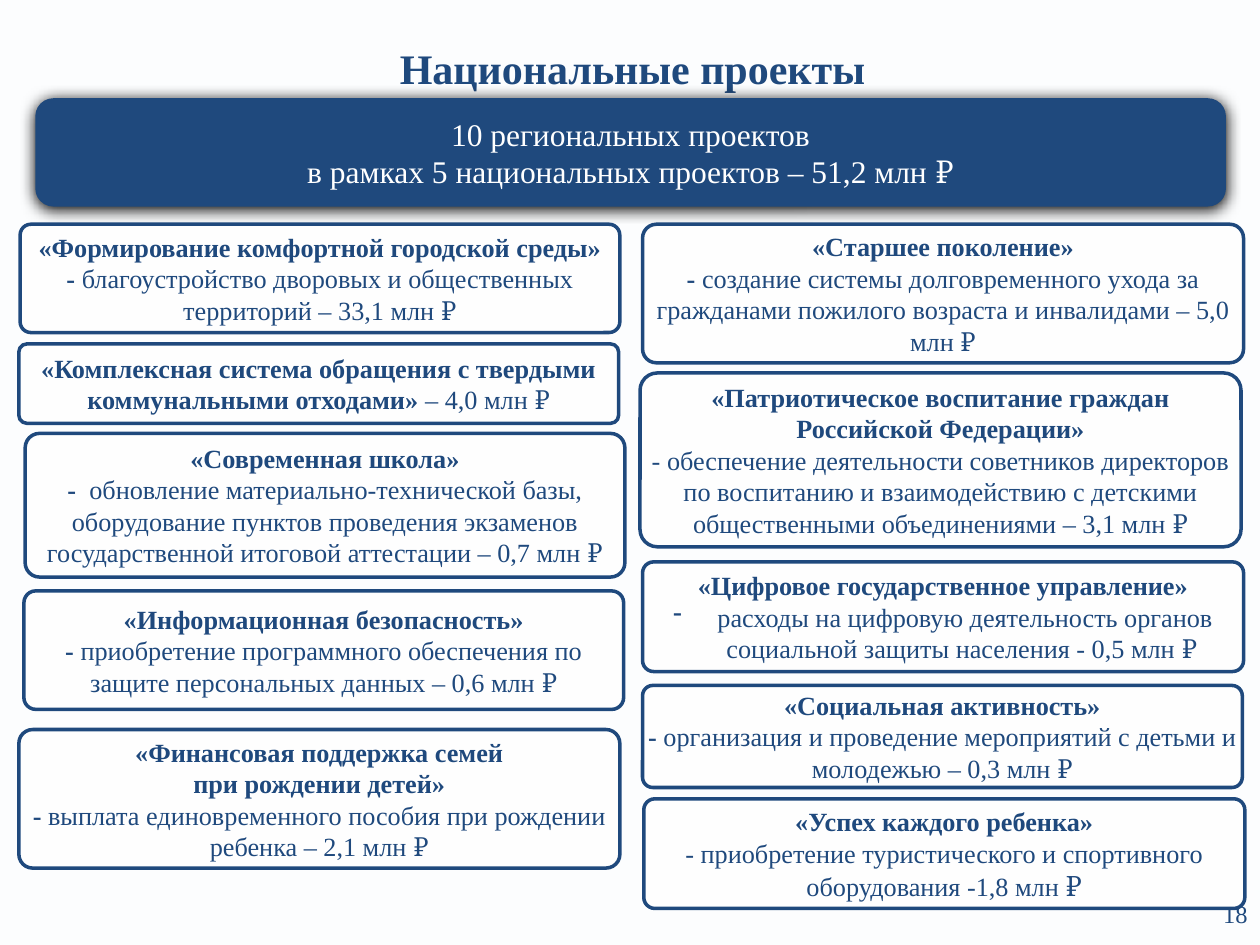
from lxml import etree
from pptx import Presentation
from pptx.dml.color import RGBColor
from pptx.enum.shapes import MSO_SHAPE
from pptx.enum.text import MSO_ANCHOR, PP_ALIGN
from pptx.oxml import parse_xml
from pptx.oxml.ns import nsdecls, qn
from pptx.util import Inches, Pt

ROUND = MSO_SHAPE.ROUNDED_RECTANGLE
TOP, MIDDLE = MSO_ANCHOR.TOP, MSO_ANCHOR.MIDDLE
CENTER, RIGHT = PP_ALIGN.CENTER, PP_ALIGN.RIGHT

NAVY = RGBColor(0x1F, 0x49, 0x7D)
WHITE = RGBColor(0xFF, 0xFF, 0xFF)
PALE = RGBColor(0xFC, 0xFD, 0xFE)

SHADOW = (
    f'<a:effectLst {nsdecls("a")}><a:outerShdw blurRad="107950" dist="12700" '
    'dir="5400000" algn="ctr" rotWithShape="0"><a:srgbClr val="000000"/>'
    "</a:outerShdw></a:effectLst>"
)

# Cards: left, top, width, height, then paragraphs as (bold part, plain part)
CARDS = [
    # Left column
    (0.16, 1.78, 4.76, 0.86, [
        ("«Формирование комфортной городской среды»", ""),
        ("- ", "благоустройство дворовых и общественных территорий – 33,1 млн ₽")]),
    (0.15, 2.73, 4.76, 0.63, [
        ("«Комплексная система обращения с твердыми коммунальными отходами» ",
         "– 4,0 млн ₽")]),
    (0.20, 3.44, 4.76, 1.14, [
        ("«Современная школа»", ""),
        ("-  ", "обновление материально-технической базы, оборудование пунктов "
         "проведения экзаменов государственной итоговой аттестации – 0,7 млн ₽")]),
    (0.19, 4.69, 4.76, 0.94, [
        ("«Информационная безопасность»", ""),
        ("- ", "приобретение программного обеспечения по защите "
         "персональных данных – 0,6 млн ₽")]),
    (0.15, 5.79, 4.77, 1.10, [
        ("«Финансовая поддержка семей", ""),
        ("при рождении детей»", ""),
        ("- ", "выплата единовременного пособия при рождении ребенка – 2,1 млн ₽")]),
    # Right column
    (5.10, 1.78, 4.77, 1.10, [
        ("«Старшее поколение»", ""),
        ("- ", "создание системы долговременного ухода за гражданами "
         "пожилого возраста и инвалидами – 5,0 млн ₽")]),
    (5.08, 2.96, 4.77, 1.38, [
        ("«Патриотическое воспитание граждан Российской Федерации»", ""),
        ("", "- обеспечение деятельности советников директоров по воспитанию и "
         "взаимодействию с детскими общественными объединениями – 3,1 млн ₽")]),
    (5.10, 4.46, 4.77, 0.87, [
        ("«Цифровое государственное управление»", ""),
        ("", " расходы на цифровую деятельность органов социальной "
         "защиты населения - 0,5 млн ₽")]),
    (5.10, 5.44, 4.76, 0.81, [
        ("«Социальная активность»", ""),
        ("- ", "организация и проведение мероприятий с детьми и "
         "молодежью – 0,3 млн ₽")]),
    (5.11, 6.34, 4.77, 0.87, [
        ("«Успех каждого ребенка»", ""),
        ("", "- приобретение туристического и спортивного оборудования -1,8 млн ")]),
]
DIGITAL, SUCCESS = 7, 9


class Deck:
    font = "Times New Roman"

    def __init__(self):
        self.prs = Presentation()
        self.prs.slide_width, self.prs.slide_height = Inches(10), Inches(7.5)
        self.slide = self.prs.slides.add_slide(self.prs.slide_layouts[6])
        back = self.slide.background.fill
        back.solid()
        back.fore_color.rgb = PALE

    def add_run(self, para, text, size, color, bold=False):
        run = para.add_run()
        run.text = text
        font = run.font
        font.name, font.size, font.bold = self.font, Pt(size), bold
        font.color.rgb = color

    def set_text(self, shape, paras, size, color, align=CENTER, anchor=MIDDLE):
        frame = shape.text_frame
        frame.word_wrap = True
        frame.vertical_anchor = anchor
        for i, parts in enumerate(paras):
            para = frame.paragraphs[0] if i == 0 else frame.add_paragraph()
            para.alignment = align
            for text, bold in zip(parts, (True, False)):
                if text:
                    self.add_run(para, text, size, color, bold)

    def label(self, box, paras, size, align=CENTER, anchor=TOP):
        shape = self.slide.shapes.add_textbox(*map(Inches, box))
        self.set_text(shape, paras, size, NAVY, align, anchor)

    def panel(self, box, fill):
        shape = self.slide.shapes.add_shape(ROUND, *map(Inches, box))
        shape.shadow.inherit = False
        shape.fill.solid()
        shape.fill.fore_color.rgb = fill
        return shape

    def banner(self, box, paras):
        shape = self.panel(box, NAVY)
        shape.line.fill.background()
        props = shape.element.spPr
        props.replace(props.find(qn("a:effectLst")), parse_xml(SHADOW))
        self.set_text(shape, paras, 18, WHITE)

    def card(self, box, paras):
        shape = self.panel(box, WHITE)
        shape.adjustments[0] = 0.1
        shape.line.color.rgb = NAVY
        shape.line.width = Pt(2)
        tone = shape.element.spPr.find(qn("a:solidFill"))[0]
        etree.SubElement(tone, qn("a:alpha"), val="90000")
        frame = shape.text_frame
        frame.margin_left = frame.margin_right = Inches(0.01)
        frame.margin_top = frame.margin_bottom = Inches(0.02)
        self.set_text(shape, paras, 15, NAVY)
        return frame

    def bullet(self, para, mark):
        props = para._p.get_or_add_pPr()
        props.set("marL", str(Inches(0.3)))
        props.set("indent", str(-Inches(0.3)))
        etree.SubElement(props, qn("a:buFontTx"))
        etree.SubElement(props, qn("a:buChar"), char=mark)


def main():
    deck = Deck()

    # Title, banner and page number
    deck.label((0.04, 0.29, 9.96, 0.5), [("Национальные проекты", "")], 24)
    deck.banner((0.28, 0.78, 9.45, 0.86), [
        ("", "10 региональных проектов"),
        ("", "в рамках 5 национальных проектов – 51,2 млн ₽")])
    deck.label((9.57, 7.05, 0.43, 0.4), [("", "18")], 14, RIGHT, MIDDLE)

    # Project cards
    frames = [deck.card(box, paras) for *box, paras in CARDS]
    deck.bullet(frames[DIGITAL].paragraphs[1], "-")

    # Larger rouble sign on the last card
    deck.add_run(frames[SUCCESS].paragraphs[1], "₽", 16, NAVY)

    deck.prs.save("out.pptx")


if __name__ == "__main__":
    main()
